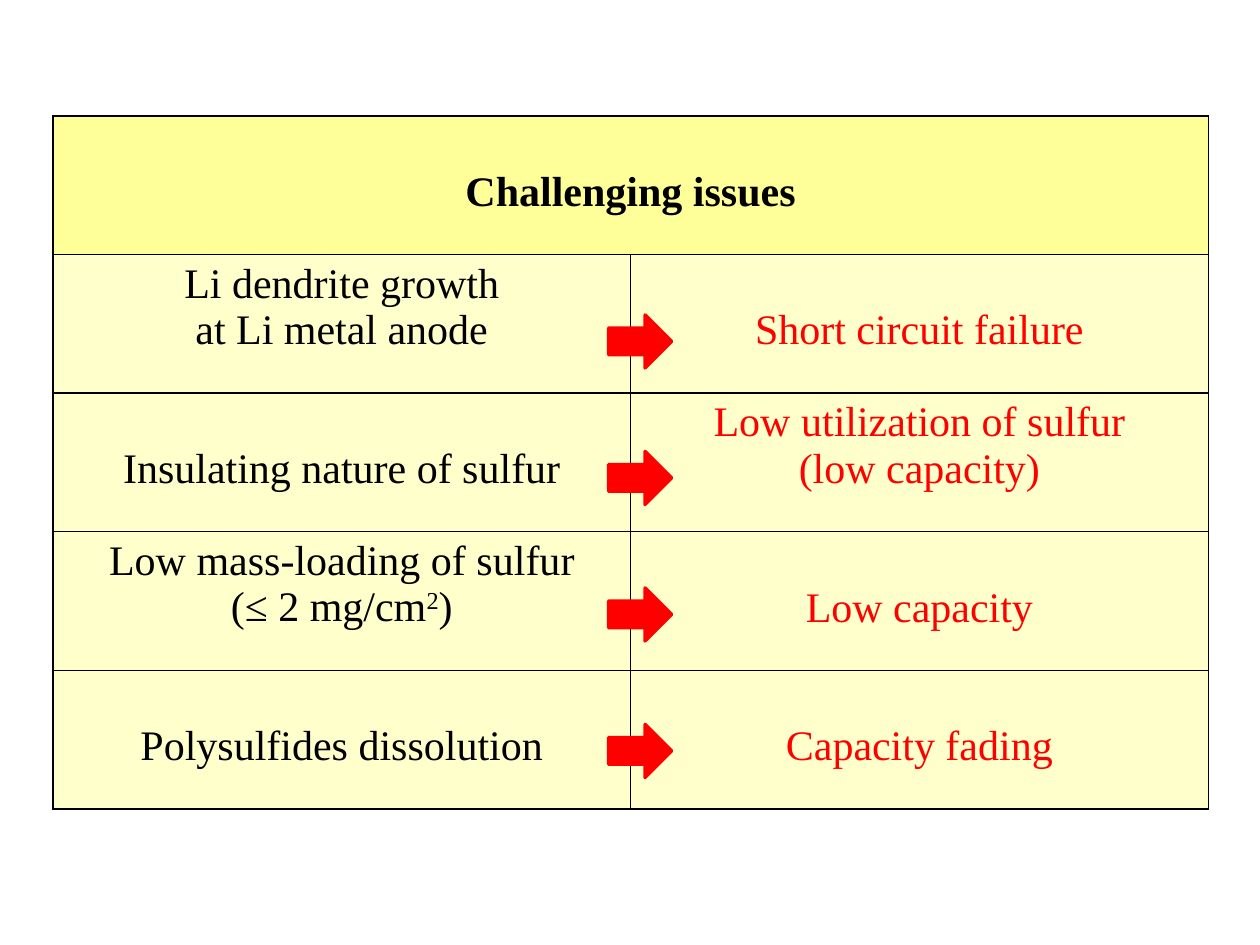
from lxml import etree
from pptx import Presentation
from pptx import util as u
from pptx.dml.color import RGBColor
from pptx.enum import shapes, text
from pptx.oxml.ns import qn

INK = {"black": "000000", "red": "FF0000", "yellow": "FFFF99"}
FONT, SIZE = "Times New Roman", 24
LINE = 0.37  # height of one text line, inches
PAD = 0.05
TITLE = "Challenging issues"
# Each issue and its result; a line holds runs, and "^" marks a raised one.
ROWS = [
    ([["Li dendrite growth"], ["at Li metal anode"]],
     [["Short circuit failure"]]),
    ([["Insulating nature of sulfur"]],
     [["Low utilization of sulfur"], ["(low capacity)"]]),
    ([["Low mass-loading of sulfur"], ["(≤ 2 mg/cm", "^2", ")"]],
     [["Low capacity"]]),
    ([["Polysulfides dissolution"]],
     [["Capacity fading"]]),
]


def color(name):
    return RGBColor.from_string(INK[name])


def border(cell):
    props = cell._tc.get_or_add_tcPr()
    for i, side in enumerate(("lnL", "lnR", "lnT", "lnB")):
        line = etree.Element(qn("a:" + side), w=str(u.Pt(1)))
        fill = etree.SubElement(line, qn("a:solidFill"))
        etree.SubElement(fill, qn("a:srgbClr"), val=INK["black"])
        props.insert(i, line)


def shade(cell, alpha):
    cell.fill.solid()
    cell.fill.fore_color.rgb = color("yellow")
    if alpha < 100:
        tone = cell._tc.tcPr.find(".//" + qn("a:srgbClr"))
        etree.SubElement(tone, qn("a:alpha"), val=str(alpha * 1000))


def write(cell, lines, ink, bold=False):
    """Fill a cell; a single line stands one line lower than a pair."""
    frame = cell.text_frame
    cell.margin_top = u.Inches(PAD + LINE * (2 - len(lines)))
    for i, line in enumerate(lines):
        para = frame.add_paragraph() if i else frame.paragraphs[0]
        para.alignment = text.PP_ALIGN.CENTER
        for part in line:
            run = para.add_run()
            run.text = part.lstrip("^")
            font = run.font
            font.name, font.size, font.bold = FONT, u.Pt(SIZE), bold
            font.color.rgb = color(ink)
            if part.startswith("^"):
                run._r.get_or_add_rPr().set("baseline", "30000")


def grid(slide, x, y, w, h):
    count = len(ROWS) + 1
    table = slide.shapes.add_table(count, 2, x, y, w, h).table
    for col in table.columns:
        col.width = w // 2
    for row in table.rows:
        row.height = h // count
    for r in range(count):
        for c in range(2):
            cell = table.cell(r, c)
            shade(cell, 50 if r else 100)
            border(cell)
    head = table.cell(0, 0)
    head.merge(table.cell(0, 1))
    write(head, [[TITLE]], "black", True)
    for r, (issue, result) in enumerate(ROWS, 1):
        write(table.cell(r, 0), issue, "black")
        write(table.cell(r, 1), result, "red")


def arrows(slide, x, y, w, h):
    """Stack one arrow per row, evenly from the top to the bottom of the box."""
    tall = u.Inches(0.42)
    step = (h - tall) / (len(ROWS) - 1)
    for i in range(len(ROWS)):
        arrow = slide.shapes.add_shape(
            shapes.MSO_SHAPE.RIGHT_ARROW, x, int(y + i * step), w, tall)
        arrow.shadow.inherit = False
        arrow.fill.solid()
        arrow.fill.fore_color.rgb = color("red")
        arrow.line.color.rgb = color("red")
        arrow.line.width = u.Pt(2)


def main():
    deck = Presentation()
    deck.slide_width, deck.slide_height = u.Inches(10), u.Inches(7.5)
    slide = deck.slides.add_slide(deck.slide_layouts[6])
    grid(slide, *map(u.Inches, (0.42, 0.92, 9.17, 5.5)))
    arrows(slide, *map(u.Inches, (4.83, 2.5, 0.5, 3.67)))
    deck.save("out.pptx")


if __name__ == "__main__":
    main()
